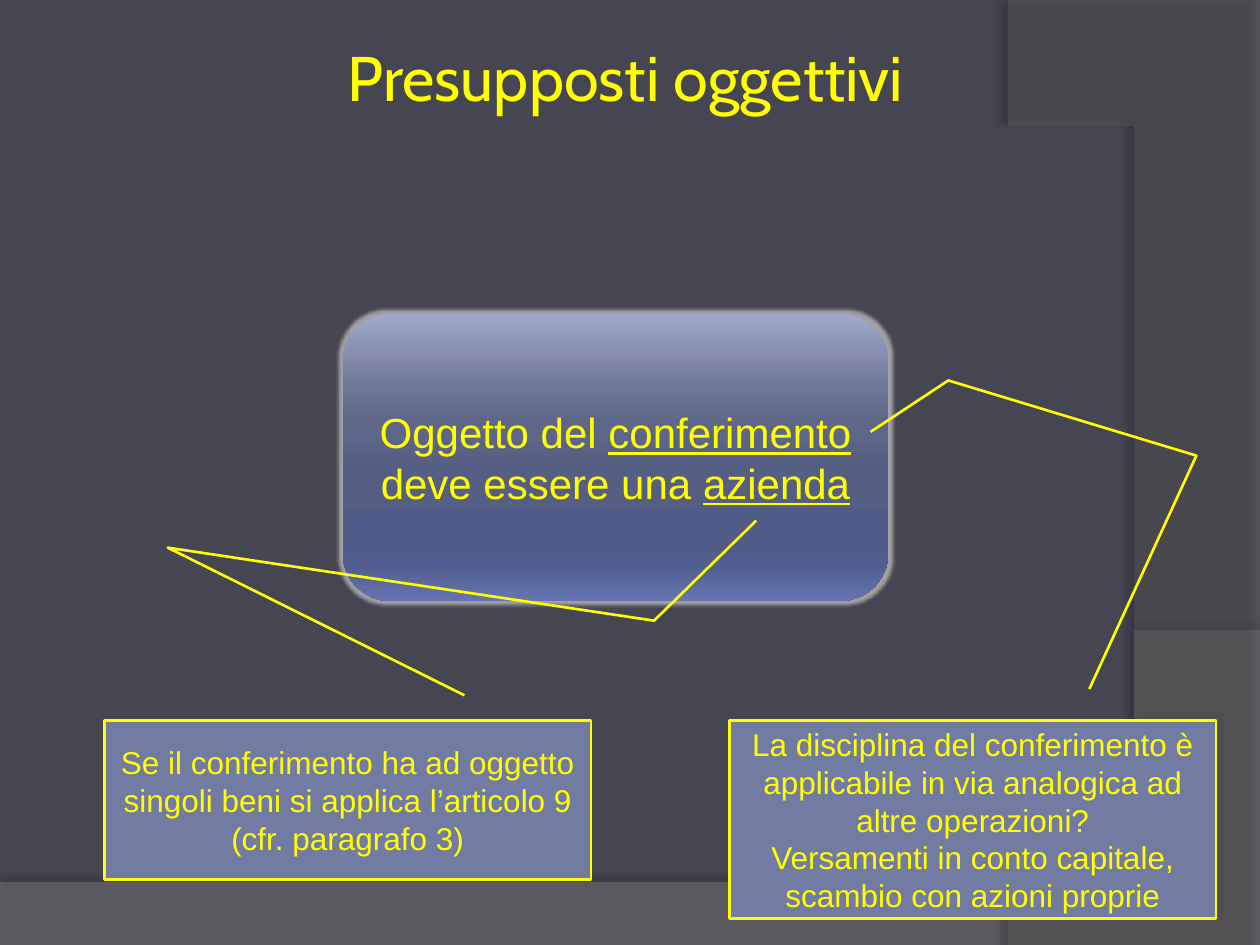
import pptx
import pptx.dml.color
import pptx.enum.dml
import pptx.enum.shapes
import pptx.enum.text
import pptx.oxml
import pptx.oxml.ns
import pptx.util
from lxml import etree

Inches = pptx.util.Inches
Pt = pptx.util.Pt
SHAPE = pptx.enum.shapes.MSO_SHAPE
qn = pptx.oxml.ns.qn


def color(value):
    return pptx.dml.color.RGBColor.from_string(value)


def add_xml(parent, xml):
    namespace = pptx.oxml.ns.nsdecls("a")
    parent.append(pptx.oxml.parse_xml(xml.replace(" ", f" {namespace} ", 1)))


def curve(start, first, second, end, steps=40):
    points = []
    for step in range(steps + 1):
        t = step / steps
        weights = ((1 - t) ** 3, 3 * t * (1 - t) ** 2, 3 * t * t * (1 - t), t ** 3)
        points.append(tuple(
            sum(w * p[axis] for w, p in zip(weights, (start, first, second, end)))
            for axis in (0, 1)))
    return points


class SlideBuilder:
    accent = "FFFF00"
    panel = "727CA3"
    body_font = "Arial"
    title_font = "Cabin"

    def __init__(self, slide):
        self.slide = slide

    def background(self, fill):
        self.slide.background.fill.solid()
        self.slide.background.fill.fore_color.rgb = color(fill)

    def format_text(self, frame, size, font):
        frame.word_wrap = True
        frame.vertical_anchor = pptx.enum.text.MSO_ANCHOR.MIDDLE
        for paragraph in frame.paragraphs:
            paragraph.alignment = pptx.enum.text.PP_ALIGN.CENTER
            for run in paragraph.runs:
                run.font.size = Pt(size)
                run.font.name = font
                run.font.color.rgb = color(self.accent)

    def title(self, text, box):
        heading = self.slide.shapes.title
        heading.left, heading.top, heading.width, heading.height = map(Inches, box)
        frame = heading.text_frame
        frame.text = text
        frame.margin_left = frame.margin_right = Inches(0.05)
        frame.margin_top = frame.margin_bottom = Inches(0.05)
        self.format_text(frame, 36, self.title_font)
        heading.element.getparent().append(heading.element)

    def wave(self, points, fill, opacity, shade, distance, angle):
        builder = self.slide.shapes.build_freeform(*points[0], scale=Inches(1))
        builder.add_line_segments(points[1:], close=True)
        wave = builder.convert_to_shape()
        wave.shadow.inherit = False
        wave.line.fill.background()
        wave.fill.solid()
        wave.fill.fore_color.rgb = color(fill)
        properties = wave.element.spPr
        add_xml(properties.find(f"{qn('a:solidFill')}/{qn('a:srgbClr')}"),
                f'<a:alpha val="{opacity * 1000}"/>')
        add_xml(properties.find(qn("a:effectLst")),
                f'<a:outerShdw blurRad="{Pt(4)}" dist="{Pt(distance)}" '
                f'dir="{angle * 60000}" algn="ctr" rotWithShape="0">'
                f'<a:srgbClr val="000000"><a:alpha val="{shade * 1000}"/>'
                '</a:srgbClr></a:outerShdw>')

    def shape(self, kind, box):
        shape = self.slide.shapes.add_shape(kind, *map(Inches, box))
        shape.shadow.inherit = False
        return shape

    def glowing_card(self, parts, box, stops):
        card = self.shape(SHAPE.ROUNDED_RECTANGLE, box)
        card.line.fill.background()
        card.fill.gradient()
        card.fill.gradient_angle = 270
        properties = card.element.spPr
        stop_list = properties.find(f"{qn('a:gradFill')}/{qn('a:gsLst')}")
        for stop in list(stop_list):
            stop_list.remove(stop)
        for position, value in stops:
            add_xml(stop_list, f'<a:gs pos="{position * 1000}"><a:srgbClr val="{value}"/></a:gs>')
        add_xml(properties.find(qn("a:effectLst")),
                f'<a:glow rad="{Pt(4)}"><a:srgbClr val="C0C0C0">'
                '<a:alpha val="75000"/></a:srgbClr></a:glow>')
        paragraph = card.text_frame.paragraphs[0]
        for text, underlined in parts:
            run = paragraph.add_run()
            run.text = text
            run.font.underline = underlined
        self.format_text(card.text_frame, 24, self.body_font)

    def callout(self, text, box, pointer):
        callout = self.shape(SHAPE.LINE_CALLOUT_3, box)
        for index, value in enumerate(pointer):
            callout.adjustments[index] = value
        callout.fill.solid()
        callout.fill.fore_color.rgb = color(self.panel)
        callout.line.color.rgb = color(self.accent)
        callout.line.width = Pt(1.5)
        callout.text_frame.text = text
        self.format_text(callout.text_frame, 18, self.body_font)


def main():
    deck = pptx.Presentation()
    deck.slide_width, deck.slide_height = Inches(10), Inches(7.5)
    page = SlideBuilder(deck.slides.add_slide(deck.slide_layouts[5]))
    page.background("464653")

    bottom_wave = [(0, 7.5), (10, 7.5)] + curve((10, 5.2), (5.59, 7.29), (3.91, 7.19), (0, 7.05))
    right_wave = [(10, 0.02), (10, 7.5)] + curve((8.21, 7.5), (9.35, 6.19), (10.18, 3), (8, 0))
    page.wave(bottom_wave, "7F7F7F", 45, 35, 3.5, 270)
    page.wave(right_wave, "5E5E5E", 40, 45, 4, 180)

    page.title("Presupposti oggettivi", (0.2, 0.29, 9.53, 0.63))
    page.glowing_card(
        [("Oggetto del ", False), ("conferimento", True),
         (" deve essere una ", False), ("azienda", True)],
        (2.72, 2.49, 4.33, 2.28),
        [(0, "A2A9C8"), (25, "707899"), (38, "5F6789"), (55, "555F83"),
         (80, "505B87"), (88, "515E91"), (100, "6675B1")])
    page.callout(
        "Se il conferimento ha ad oggetto singoli beni si applica l’articolo 9 (cfr. paragrafo 3)",
        (0.83, 5.72, 3.86, 1.26),
        (-0.16, 0.74, -1.09, 0.13, -0.63, 1.13, -1.26, 1.34))
    page.callout(
        "La disciplina del conferimento è applicabile in via analogica ad altre operazioni?\n"
        "Versamenti in conto capitale, scambio con azioni proprie",
        (5.79, 5.72, 3.86, 1.57),
        (-0.16, 0.74, -1.34, 0.96, -1.72, 0.45, -1.46, 0.29))
    deck.save("out.pptx")


if __name__ == "__main__":
    main()
